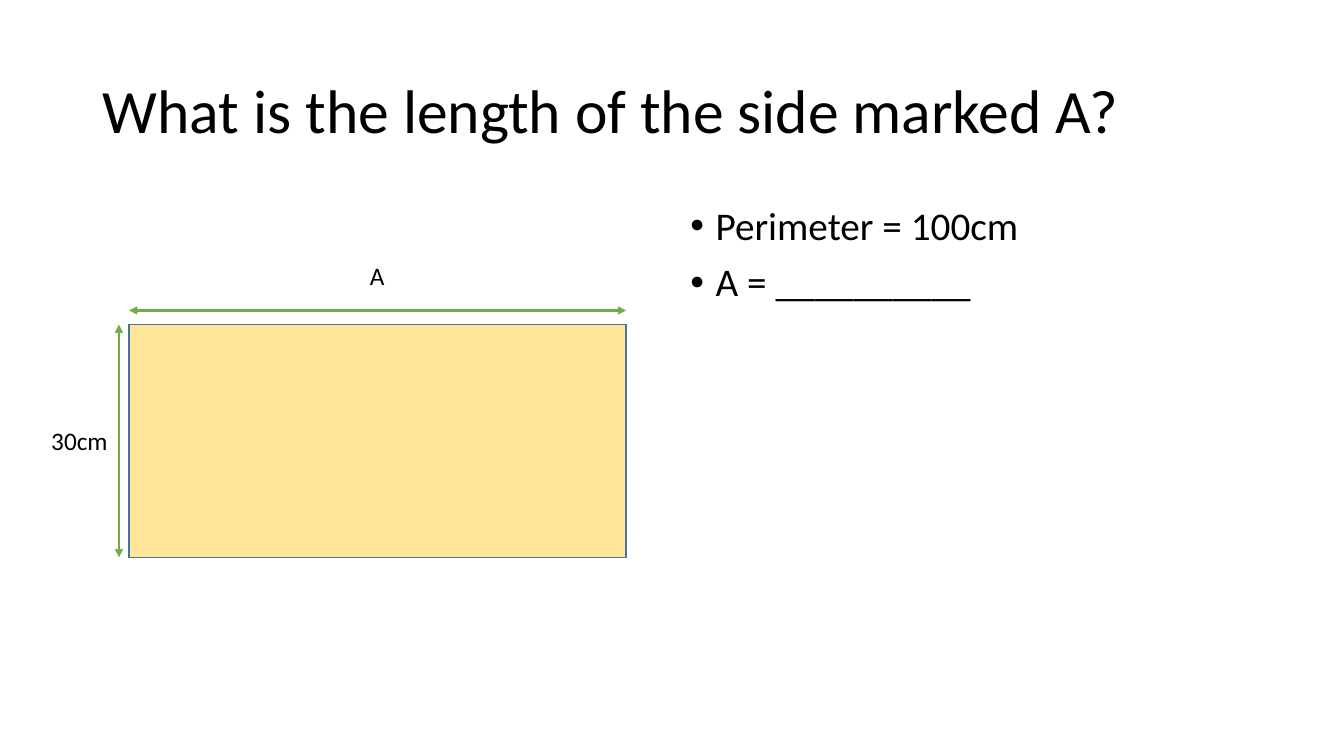
from dataclasses import dataclass

from lxml import etree
from pptx import Presentation
from pptx import util as u
from pptx.dml.color import RGBColor
from pptx.enum import shapes, text
from pptx.oxml.ns import qn

PX = 9144
FONT = "Calibri"
BLACK = RGBColor(0x00, 0x00, 0x00)
SAND = RGBColor(0xFF, 0xE6, 0x99)
BLUE = RGBColor(0x43, 0x73, 0x9E)
GREEN = RGBColor(0x70, 0xAD, 0x47)


@dataclass(frozen=True)
class Box:
    left: int
    top: int
    width: int
    height: int

    @property
    def right(self) -> int:
        return self.left + self.width

    @property
    def bottom(self) -> int:
        return self.top + self.height

    def emu(self) -> tuple[int, int, int, int]:
        return self.left * PX, self.top * PX, self.width * PX, self.height * PX


@dataclass(frozen=True)
class Dimension:
    label: str
    label_box: Box
    start: tuple[int, int]
    end: tuple[int, int]
    wrap: bool


RECTANGLE = Box(128, 322, 493, 231)
WIDTH_LINE_Y = RECTANGLE.top - 14
HEIGHT_LINE_X = RECTANGLE.left - 10
DIMENSIONS = [
    Dimension("A", Box(357, 253, 35, 40), (RECTANGLE.left, WIDTH_LINE_Y),
              (RECTANGLE.right, WIDTH_LINE_Y), False),
    Dimension("30cm", Box(41, 417, 111, 40), (HEIGHT_LINE_X, RECTANGLE.top),
              (HEIGHT_LINE_X, RECTANGLE.bottom), True),
]
FACTS = ["Perimeter = 100cm", "A = __________"]


def set_font(paragraph, size: int) -> None:
    paragraph.font.name = FONT
    paragraph.font.size = u.Pt(size)
    paragraph.font.color.rgb = BLACK


def add_title(slide, wording: str, box: Box) -> None:
    title = slide.shapes.title
    title.left, title.top, title.width, title.height = box.emu()
    frame = title.text_frame
    frame.text = wording
    frame.auto_size = text.MSO_AUTO_SIZE.NONE
    frame.vertical_anchor = text.MSO_ANCHOR.MIDDLE
    heading = frame.paragraphs[0]
    heading.alignment = text.PP_ALIGN.LEFT
    heading.line_spacing = 0.9
    set_font(heading, 44)


def add_facts(slide, facts: list[str], box: Box) -> None:
    frame = slide.shapes.add_textbox(*box.emu()).text_frame
    frame.word_wrap = True
    for index, wording in enumerate(facts):
        fact = frame.add_paragraph() if index else frame.paragraphs[0]
        fact.text = wording
        fact.line_spacing = 0.9
        fact.space_before = u.Pt(10 if index else 0)
        properties = fact._p.get_or_add_pPr()
        properties.set("marL", str(25 * PX))
        properties.set("indent", str(-25 * PX))
        etree.SubElement(properties, qn("a:buFont"), typeface="Arial")
        etree.SubElement(properties, qn("a:buChar"), char="•")
        set_font(fact, 28)


def add_rectangle(slide, box: Box) -> None:
    rectangle = slide.shapes.add_shape(shapes.MSO_SHAPE.RECTANGLE, *box.emu())
    rectangle.shadow.inherit = False
    rectangle.fill.solid()
    rectangle.fill.fore_color.rgb = SAND
    rectangle.line.color.rgb = BLUE
    rectangle.line.width = u.Pt(1)


def add_dimension(slide, dimension: Dimension) -> None:
    ends = [length * PX for length in dimension.start + dimension.end]
    arrow = slide.shapes.add_connector(shapes.MSO_CONNECTOR.STRAIGHT, *ends)
    arrow.line.color.rgb = GREEN
    arrow.line.width = u.Pt(1.5)
    outline = arrow.line._get_or_add_ln()
    for tip in ("a:headEnd", "a:tailEnd"):
        etree.SubElement(outline, qn(tip), type="triangle")
    etree.SubElement(arrow._element.spPr, qn("a:effectLst"))

    frame = slide.shapes.add_textbox(*dimension.label_box.emu()).text_frame
    frame.word_wrap = dimension.wrap
    frame.auto_size = text.MSO_AUTO_SIZE.SHAPE_TO_FIT_TEXT
    frame.text = dimension.label
    set_font(frame.paragraphs[0], 18)


def main() -> None:
    deck = Presentation()
    deck.slide_width, deck.slide_height = 1333 * PX, 750 * PX
    slide = deck.slides.add_slide(deck.slide_layouts.get_by_name("Title Only"))
    add_title(slide, "What is the length of the side marked A?", Box(92, 40, 1150, 145))
    add_facts(slide, FACTS, Box(675, 200, 567, 476))
    add_rectangle(slide, RECTANGLE)
    for dimension in DIMENSIONS:
        add_dimension(slide, dimension)
    deck.save("out.pptx")


if __name__ == "__main__":
    main()
